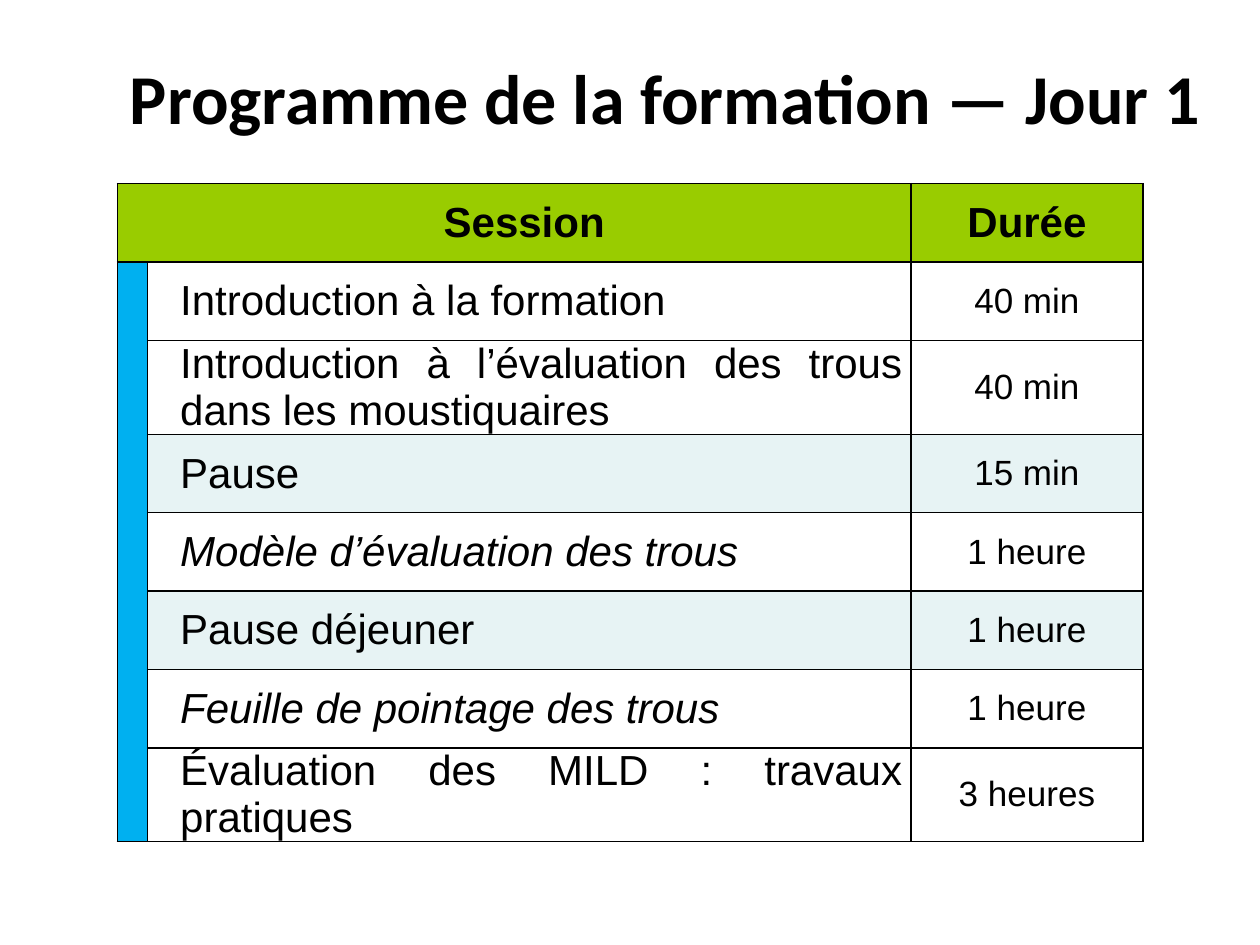
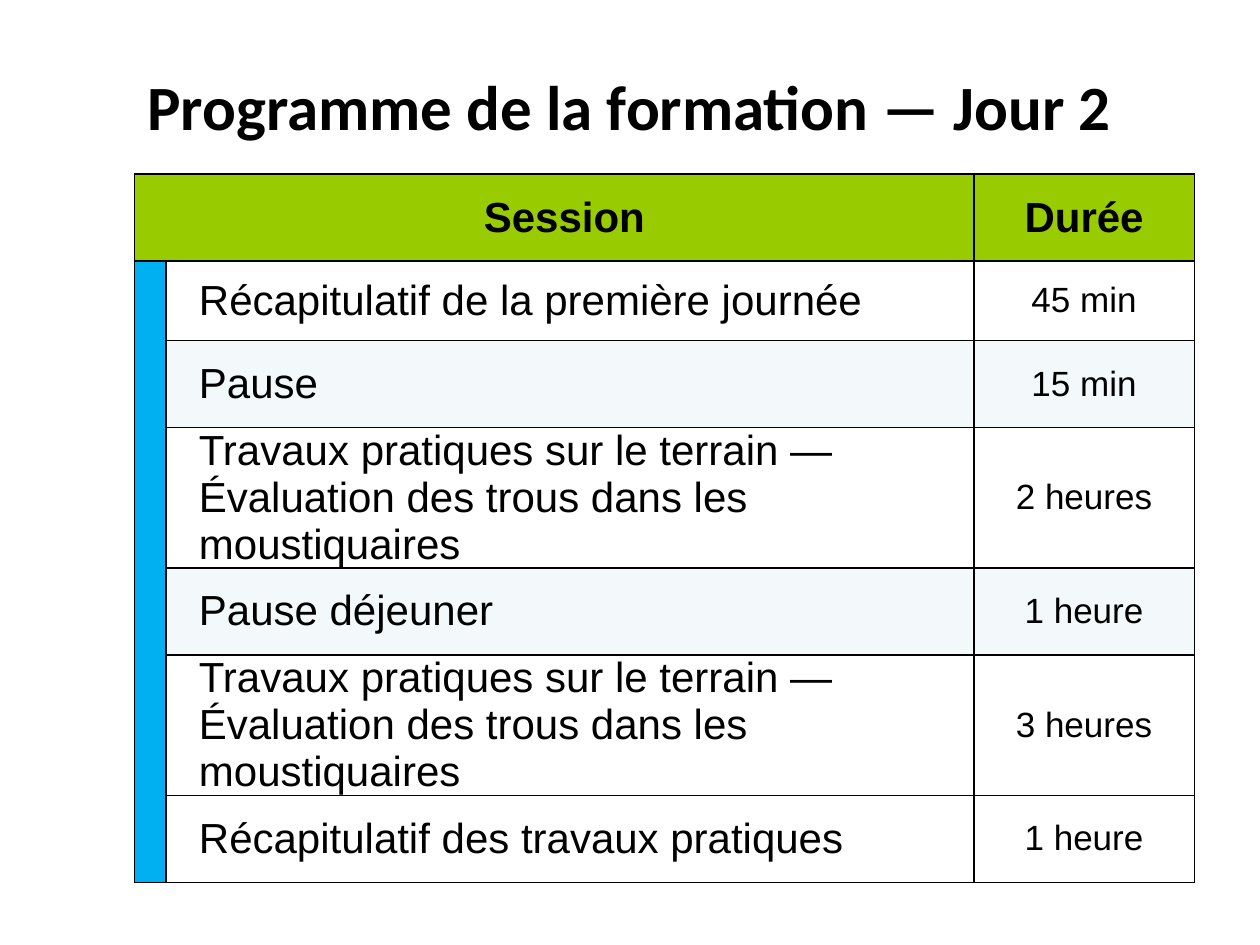
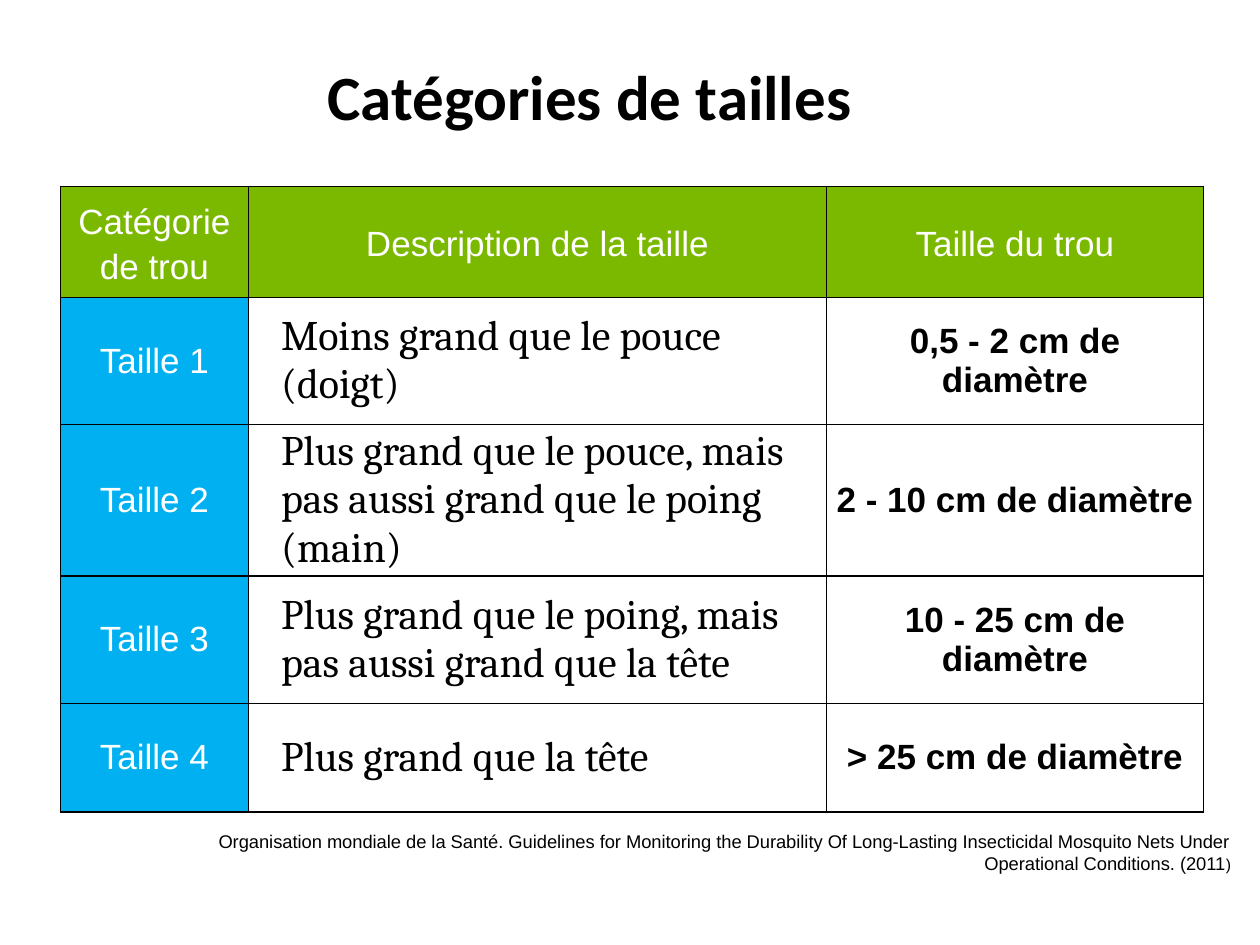
from dataclasses import dataclass

from lxml.etree import SubElement
from pptx import Presentation
from pptx.dml.color import RGBColor
from pptx.enum.text import MSO_ANCHOR as Anchor, MSO_AUTO_SIZE as AutoSize, PP_ALIGN as Align
from pptx.oxml.ns import qn
from pptx.util import Pt


@dataclass(frozen=True)
class Theme:
    black: str = "000000"
    white: str = "FFFFFF"
    lime: str = "99CC00"
    green: str = "7BB800"
    blue: str = "00B0F0"
    mist: str = "E7F3F4"
    pale_mist: str = "F3F9FA"
    heading_font: str = "Calibri"
    body_font: str = "Arial"
    serif_font: str = "Cambria"
    day_one_title: float = 40
    title: float = 36
    large: float = 24
    medium: float = 20
    citation: float = 10.5
    citation_end: float = 9
    border: float = 1
    cell_margin: float = 5
    text_indent: float = 13.7
    session_indent: float = 11.5


THEME = Theme()


@dataclass(frozen=True)
class Box:
    left: float
    top: float
    width: float
    height: float


@dataclass(frozen=True)
class CellStyle:
    size: float
    fill: str = THEME.white
    color: str = THEME.black
    font: str = THEME.body_font
    bold: bool = False
    italic: bool = False
    align: Align = Align.CENTER
    indent: float = 0
    line_spacing: float = 1.0


@dataclass(frozen=True)
class Session:
    name: str
    duration: str
    height: float
    is_break: bool = False
    italic: bool = False


@dataclass(frozen=True)
class Agenda:
    title: str
    title_box: Box
    title_size: float
    left: float
    top: float
    columns: tuple[float, ...]
    header_height: float
    break_fill: str
    align: Align
    sessions: tuple[Session, ...]


@dataclass(frozen=True)
class HoleSize:
    category: str
    description: str
    diameter: str
    height: float


# Content
DAY_ONE = Agenda(
    "Programme de la formation — Jour 1", Box(67, 16, 653, 78.5), THEME.day_one_title,
    67, 105, (17.3, 436.3, 132.5), 44.8, THEME.mist, Align.JUSTIFY,
    (
        Session("Introduction à la formation", "40 min", 44.8),
        Session("Introduction à l’évaluation des trous dans les moustiquaires", "40 min", 53.6),
        Session("Pause", "15 min", 44.8, is_break=True),
        Session("Modèle d’évaluation des trous", "1 heure", 44.8, italic=True),
        Session("Pause déjeuner", "1 heure", 44.8, is_break=True),
        Session("Feuille de pointage des trous", "1 heure", 44.8, italic=True),
        Session("Évaluation des MILD : travaux pratiques", "3 heures", 53.6),
    ),
)
FIELD_WORK = "Travaux pratiques sur le terrain — Évaluation des trous dans les moustiquaires"
DAY_TWO = Agenda(
    "Programme de la formation — Jour 2", Box(77, 21, 597, 78.5), THEME.title,
    77, 99.4, (18, 461.5, 126), 49.7, THEME.pale_mist, Align.LEFT,
    (
        Session("Récapitulatif de la première journée", "45 min", 45.4),
        Session("Pause", "15 min", 49.7, is_break=True),
        Session(FIELD_WORK, "2 heures", 80.3),
        Session("Pause déjeuner", "1 heure", 49.7, is_break=True),
        Session(FIELD_WORK, "3 heures", 80.3),
        Session("Récapitulatif des travaux pratiques", "1 heure", 49.7),
    ),
)
SIZE_HEADERS = ("Catégorie de trou", "Description de la taille", "Taille du trou")
HOLE_SIZES = (
    HoleSize("Taille 1", "Moins grand que le pouce (doigt)", "0,5 - 2 cm de diamètre", 72.8),
    HoleSize("Taille 2", "Plus grand que le pouce, mais pas aussi grand que le poing (main)",
             "2 - 10 cm de diamètre", 86.4),
    HoleSize("Taille 3", "Plus grand que le poing, mais pas aussi grand que la tête",
             "10 - 25 cm de diamètre", 72.8),
    HoleSize("Taille 4", "Plus grand que la tête", "> 25 cm de diamètre", 62),
)
CITATION = (
    "Organisation mondiale de la Santé. Guidelines for Monitoring the Durability Of "
    "Long-Lasting Insecticidal Mosquito Nets Under Operational Conditions. (2011"
)


# Shared drawing functions
def format_font(font, name: str, size: float, color: str,
                bold: bool = False, italic: bool = False) -> None:
    font.name, font.size = name, Pt(size)
    font.bold, font.italic = bold, italic
    font.color.rgb = RGBColor.from_string(color)


def add_titled_slide(deck, title: str, box: Box, size: float):
    slide = deck.slides.add_slide(deck.slide_layouts[5])
    heading = slide.shapes.title
    heading.left, heading.top = Pt(box.left), Pt(box.top)
    heading.width, heading.height = Pt(box.width), Pt(box.height)
    frame = heading.text_frame
    frame.text = title
    frame.auto_size = AutoSize.NONE
    frame.vertical_anchor = Anchor.MIDDLE
    line = frame.paragraphs[0]
    line.alignment = Align.LEFT
    format_font(line.runs[0].font, THEME.heading_font, size, THEME.black, bold=True)
    return slide


def add_grid(slide, left: float, top: float, columns: tuple[float, ...], rows: list[float]):
    grid = slide.shapes.add_table(len(rows), len(columns), Pt(left), Pt(top),
                                  Pt(sum(columns)), Pt(sum(rows))).table
    grid.first_row = grid.horz_banding = False
    for column, width in zip(grid.columns, columns):
        column.width = Pt(width)
    for row, height in zip(grid.rows, rows):
        row.height = Pt(height)
    for cell in grid.iter_cells():
        add_borders(cell)
        cell.margin_left = cell.margin_right = Pt(THEME.cell_margin)
        cell.margin_top = cell.margin_bottom = 0
        cell.vertical_anchor = Anchor.MIDDLE
    return grid


def add_borders(cell) -> None:
    properties = cell._tc.get_or_add_tcPr()
    for side in ("a:lnL", "a:lnR", "a:lnT", "a:lnB"):
        edge = SubElement(properties, qn(side), w=str(Pt(THEME.border)))
        SubElement(SubElement(edge, qn("a:solidFill")), qn("a:srgbClr"), val=THEME.black)


def paint(cell, color: str) -> None:
    cell.fill.solid()
    cell.fill.fore_color.rgb = RGBColor.from_string(color)


def write_cell(cell, text: str, style: CellStyle) -> None:
    paint(cell, style.fill)
    cell.text_frame.text = text
    line = cell.text_frame.paragraphs[0]
    line.alignment = style.align
    line.line_spacing = style.line_spacing
    line._p.get_or_add_pPr().set("marL", str(Pt(style.indent)))
    format_font(line.runs[0].font, style.font, style.size, style.color,
                style.bold, style.italic)


# Slides
def add_agenda(deck, agenda: Agenda) -> None:
    slide = add_titled_slide(deck, agenda.title, agenda.title_box, agenda.title_size)
    heights = [agenda.header_height] + [session.height for session in agenda.sessions]
    grid = add_grid(slide, agenda.left, agenda.top, agenda.columns, heights)

    # Header row and blue side band
    grid.cell(0, 0).merge(grid.cell(0, 1))
    grid.cell(1, 0).merge(grid.cell(len(agenda.sessions), 0))
    paint(grid.cell(0, 1), THEME.lime)
    write_cell(grid.cell(0, 0), "Session",
               CellStyle(THEME.large, THEME.lime, bold=True, indent=THEME.session_indent))
    write_cell(grid.cell(0, 2), "Durée", CellStyle(THEME.large, THEME.lime, bold=True))

    for row, session in enumerate(agenda.sessions, start=1):
        fill = agenda.break_fill if session.is_break else THEME.white
        paint(grid.cell(row, 0), THEME.blue)
        write_cell(grid.cell(row, 1), session.name,
                   CellStyle(THEME.large, fill, italic=session.italic,
                             align=agenda.align, indent=THEME.text_indent))
        write_cell(grid.cell(row, 2), session.duration, CellStyle(THEME.medium, fill))


def add_citation(slide) -> None:
    frame = slide.shapes.add_textbox(Pt(83.5), Pt(471), Pt(627), Pt(32.4)).text_frame
    frame.word_wrap = True
    frame.vertical_anchor = Anchor.MIDDLE
    line = frame.paragraphs[0]
    line.text = CITATION
    line.alignment = Align.RIGHT
    format_font(line.runs[0].font, THEME.body_font, THEME.citation, THEME.black)
    closing = line.add_run()
    closing.text = ")"
    format_font(closing.font, THEME.body_font, THEME.citation_end, THEME.black)


def add_hole_sizes(deck) -> None:
    slide = add_titled_slide(deck, "Catégories de tailles", Box(180, 15, 530, 78.5), THEME.title)
    add_citation(slide)
    heights = [63.4] + [hole.height for hole in HOLE_SIZES]
    grid = add_grid(slide, 34.6, 106.5, (107.3, 330.5, 215.3), heights)

    header = CellStyle(THEME.medium, THEME.green, THEME.white, line_spacing=1.15)
    category = CellStyle(THEME.medium, THEME.blue, THEME.white)
    description = CellStyle(THEME.large, font=THEME.serif_font, align=Align.LEFT,
                            indent=THEME.text_indent)
    diameter = CellStyle(THEME.medium, bold=True)

    for column, label in enumerate(SIZE_HEADERS):
        write_cell(grid.cell(0, column), label, header)
    for row, hole in enumerate(HOLE_SIZES, start=1):
        write_cell(grid.cell(row, 0), hole.category, category)
        write_cell(grid.cell(row, 1), hole.description, description)
        write_cell(grid.cell(row, 2), hole.diameter, diameter)


def main() -> None:
    deck = Presentation()
    deck.slide_width, deck.slide_height = Pt(720), Pt(540)
    for agenda in (DAY_ONE, DAY_TWO):
        add_agenda(deck, agenda)
    add_hole_sizes(deck)
    deck.save("out.pptx")


if __name__ == "__main__":
    main()
